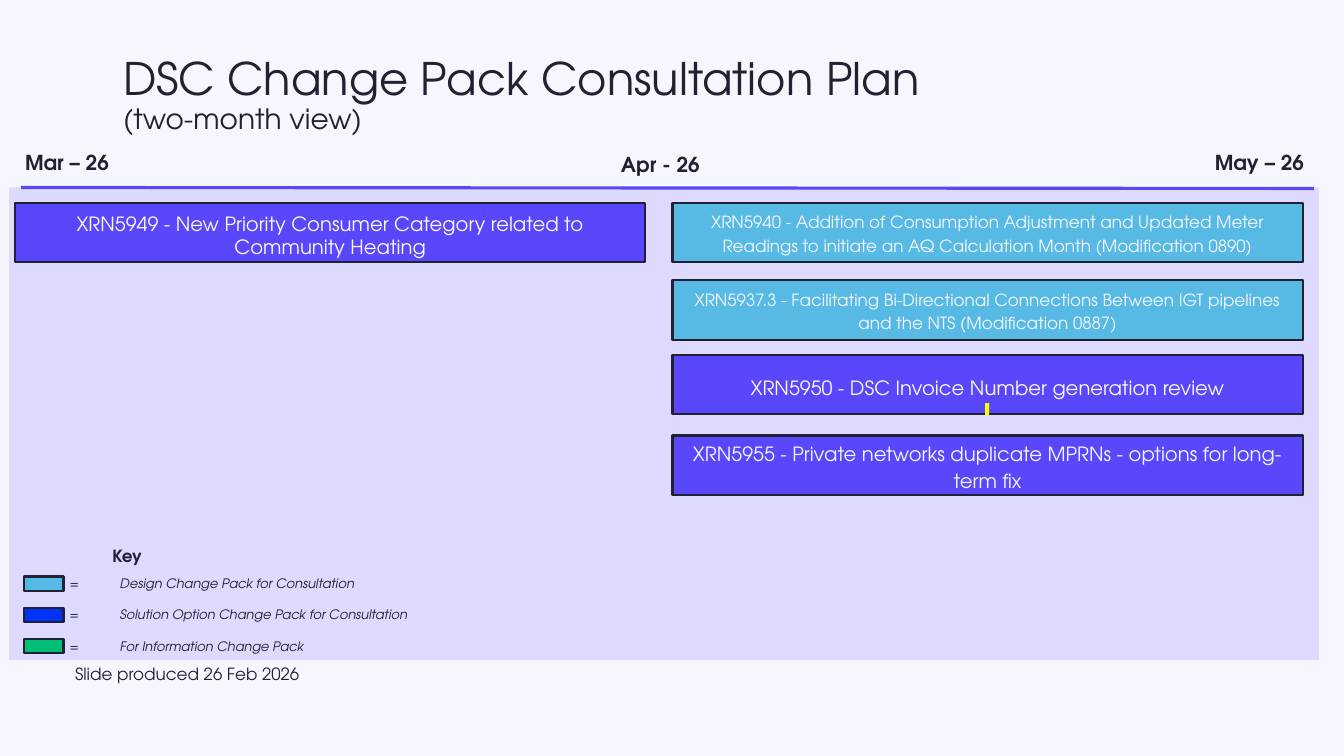
from dataclasses import dataclass

from lxml import etree
from pptx import Presentation
from pptx.dml.color import RGBColor
from pptx.enum.shapes import MSO_CONNECTOR, MSO_SHAPE
from pptx.enum.text import MSO_ANCHOR, MSO_AUTO_SIZE, PP_ALIGN
from pptx.oxml.ns import qn
from pptx.shapes.autoshape import Shape
from pptx.slide import Slide
from pptx.text.text import TextFrame
from pptx.util import Inches, Pt

RECTANGLE = MSO_SHAPE.RECTANGLE
STRAIGHT = MSO_CONNECTOR.STRAIGHT
MIDDLE, TOP = MSO_ANCHOR.MIDDLE, MSO_ANCHOR.TOP
LEFT, CENTER, RIGHT = PP_ALIGN.LEFT, PP_ALIGN.CENTER, PP_ALIGN.RIGHT
NO_AUTOFIT = MSO_AUTO_SIZE.NONE

FONT = "TeX Gyre Adventor"
COLORS = {
    "background": "F5F7FF",
    "panel": "DEDAFE",
    "ink": "212133",
    "timeline": "5947FC",
    "solution": "5947FC",
    "design": "57BAE5",
    "design_key": "55B9E5",
    "solution_key": "0032FA",
    "information_key": "00BF75",
    "marker": "FFFF00",
    "light": "F5F7FF",
    "pale": "FDFAFF",
}
MARCH_LEFT, APRIL_LEFT = 0.15, 6.67
CHANGE_WIDTH, CHANGE_HEIGHT = 6.25, 0.59
KEY_TOP, KEY_PITCH = 5.72, 0.31


@dataclass(frozen=True)
class Change:
    text: str
    left: float
    top: float
    fill: str
    size: float
    color: str = "light"
    spacing: float = 1.15
    top_inset: float = 0.07


@dataclass(frozen=True)
class Caption:
    text: str
    left: float
    top: float
    width: float
    height: float
    size: float
    bold: bool = False
    align: PP_ALIGN = LEFT
    wrap: bool = True


@dataclass(frozen=True)
class KeyEntry:
    label: str
    color: str


CHANGES = [
    Change("XRN5949 - New Priority Consumer Category related to Community Heating",
           MARCH_LEFT, 2.01, "solution", 14, "pale", 1.0, 0.13),
    Change("XRN5940 - Addition of Consumption Adjustment and Updated Meter Readings "
           "to initiate an AQ Calculation Month (Modification 0890)",
           APRIL_LEFT, 2.01, "design", 12),
    Change("XRN5937.3 - Facilitating Bi-Directional Connections Between IGT pipelines "
           "and the NTS (Modification 0887)", APRIL_LEFT, 2.78, "design", 12),
    Change("XRN5950 - DSC Invoice Number generation review",
           APRIL_LEFT, 3.52, "solution", 14, "pale", 1.0, 0.13),
    Change("XRN5955 - Private networks duplicate MPRNs - options for long-term fix",
           APRIL_LEFT, 4.32, "solution", 14),
]
CAPTIONS = [
    Caption("Mar – 26", 0.15, 1.43, 1.04, 0.35, 14.7, bold=True, wrap=False),
    Caption("Apr - 26", 6.06, 1.45, 0.99, 0.35, 14.7, bold=True, wrap=False),
    Caption("May – 26", 11.95, 1.43, 1.09, 0.35, 14.7, bold=True, wrap=False),
    Caption("Key", -0.16, 5.36, 2.84, 0.3, 12, bold=True, align=CENTER),
    Caption("Slide produced 26 Feb 2026", 0.34, 6.53, 2.73, 0.3, 12, align=RIGHT),
]
KEY_ENTRIES = [
    KeyEntry("Design Change Pack for Consultation", "design_key"),
    KeyEntry("Solution Option Change Pack for Consultation", "solution_key"),
    KeyEntry("For Information Change Pack", "information_key"),
]


def rgb(name: str) -> RGBColor:
    return RGBColor.from_string(COLORS[name])


def place(shape: Shape, left: float, top: float, width: float, height: float) -> None:
    shape.left, shape.top = Inches(left), Inches(top)
    shape.width, shape.height = Inches(width), Inches(height)


def format_text(frame: TextFrame, size: float, color: str = "ink", bold: bool = False,
                italic: bool = False, align: PP_ALIGN = LEFT, spacing: float = 1.0) -> None:
    for paragraph in frame.paragraphs:
        paragraph.alignment = align
        paragraph.line_spacing = spacing
        paragraph.space_before = Pt(0)
        for run in paragraph.runs:
            run.font.name = FONT
            run.font.size = Pt(size)
            run.font.bold = bold
            run.font.italic = italic
            run.font.color.rgb = rgb(color)


def add_rectangle(slide: Slide, left: float, top: float, width: float, height: float,
                  fill: str, outlined: bool = False) -> Shape:
    rectangle = slide.shapes.add_shape(
        RECTANGLE, Inches(left), Inches(top), Inches(width), Inches(height))
    rectangle.shadow.inherit = False
    rectangle.fill.solid()
    rectangle.fill.fore_color.rgb = rgb(fill)
    if outlined:
        rectangle.line.color.rgb = rgb("ink")
        rectangle.line.width = Pt(1.5)
    else:
        rectangle.line.fill.background()
    return rectangle


def add_title(slide: Slide) -> None:
    title = slide.shapes.title
    place(title, 1.12, 0.42, 12.21, 1.06)
    frame = title.text_frame
    frame.text = "DSC Change Pack Consultation Plan\v(two-month view)"
    frame.auto_size = NO_AUTOFIT
    frame.vertical_anchor = MIDDLE
    format_text(frame, 32, spacing=0.9)
    frame.paragraphs[0].runs[-1].font.size = Pt(20)


def add_timeline(slide: Slide) -> None:
    timeline = slide.shapes.add_connector(
        STRAIGHT, Inches(0.21), Inches(1.86), Inches(13.03), Inches(1.87))
    timeline.line.color.rgb = rgb("timeline")
    timeline.line.width = Pt(2.25)
    etree.SubElement(timeline._element.spPr, qn("a:effectLst"))


def add_caption(slide: Slide, caption: Caption) -> None:
    box = slide.shapes.add_textbox(Inches(caption.left), Inches(caption.top),
                                   Inches(caption.width), Inches(caption.height))
    frame = box.text_frame
    frame.word_wrap = caption.wrap
    frame.vertical_anchor = MIDDLE
    frame.text = caption.text
    format_text(frame, caption.size, bold=caption.bold, align=caption.align)


def add_change(slide: Slide, change: Change) -> None:
    box = add_rectangle(slide, change.left, change.top, CHANGE_WIDTH, CHANGE_HEIGHT,
                        change.fill, outlined=True)
    frame = box.text_frame
    frame.word_wrap = True
    frame.vertical_anchor = MIDDLE
    frame.margin_left = frame.margin_right = Inches(0.13)
    frame.margin_top, frame.margin_bottom = Inches(change.top_inset), Inches(0.07)
    frame.text = change.text
    format_text(frame, change.size, change.color, align=CENTER, spacing=change.spacing)


def add_key(slide: Slide) -> None:
    labels = slide.placeholders[1]
    place(labels, 0.69, KEY_TOP - 0.01, 3.48, 0.8)
    frame = labels.text_frame
    frame.text = "\n".join(f"=\t{entry.label}" for entry in KEY_ENTRIES)
    frame.auto_size = NO_AUTOFIT
    frame.vertical_anchor = TOP
    frame.margin_left = frame.margin_right = frame.margin_top = frame.margin_bottom = 0
    for paragraph in frame.paragraphs:
        properties = paragraph._p.get_or_add_pPr()
        properties.set("marL", "0")
        properties.set("indent", "0")
        etree.SubElement(properties, qn("a:buNone"))
        tabs = etree.SubElement(properties, qn("a:tabLst"))
        etree.SubElement(tabs, qn("a:tab"), pos=str(Inches(0.16)), algn="l")
        paragraph.space_after = Pt(11.16)
    format_text(frame, 9.3, italic=True)
    for row, entry in enumerate(KEY_ENTRIES):
        add_rectangle(slide, 0.24, KEY_TOP + row * KEY_PITCH, 0.39, 0.14,
                      entry.color, outlined=True)


def main() -> None:
    presentation = Presentation()
    presentation.slide_width, presentation.slide_height = Inches(13.33), Inches(7.5)
    slide = presentation.slides.add_slide(presentation.slide_layouts[1])
    slide.background.fill.solid()
    slide.background.fill.fore_color.rgb = rgb("background")
    panel = add_rectangle(slide, 0.09, 1.86, 12.99, 4.69, "panel")
    slide.shapes.title._element.addprevious(panel._element)
    add_title(slide)
    add_timeline(slide)
    for caption in CAPTIONS:
        add_caption(slide, caption)
    add_key(slide)
    for change in CHANGES:
        add_change(slide, change)
    add_rectangle(slide, 9.77, 4.0, 0.04, 0.12, "marker")
    presentation.save("out.pptx")


if __name__ == "__main__":
    main()
